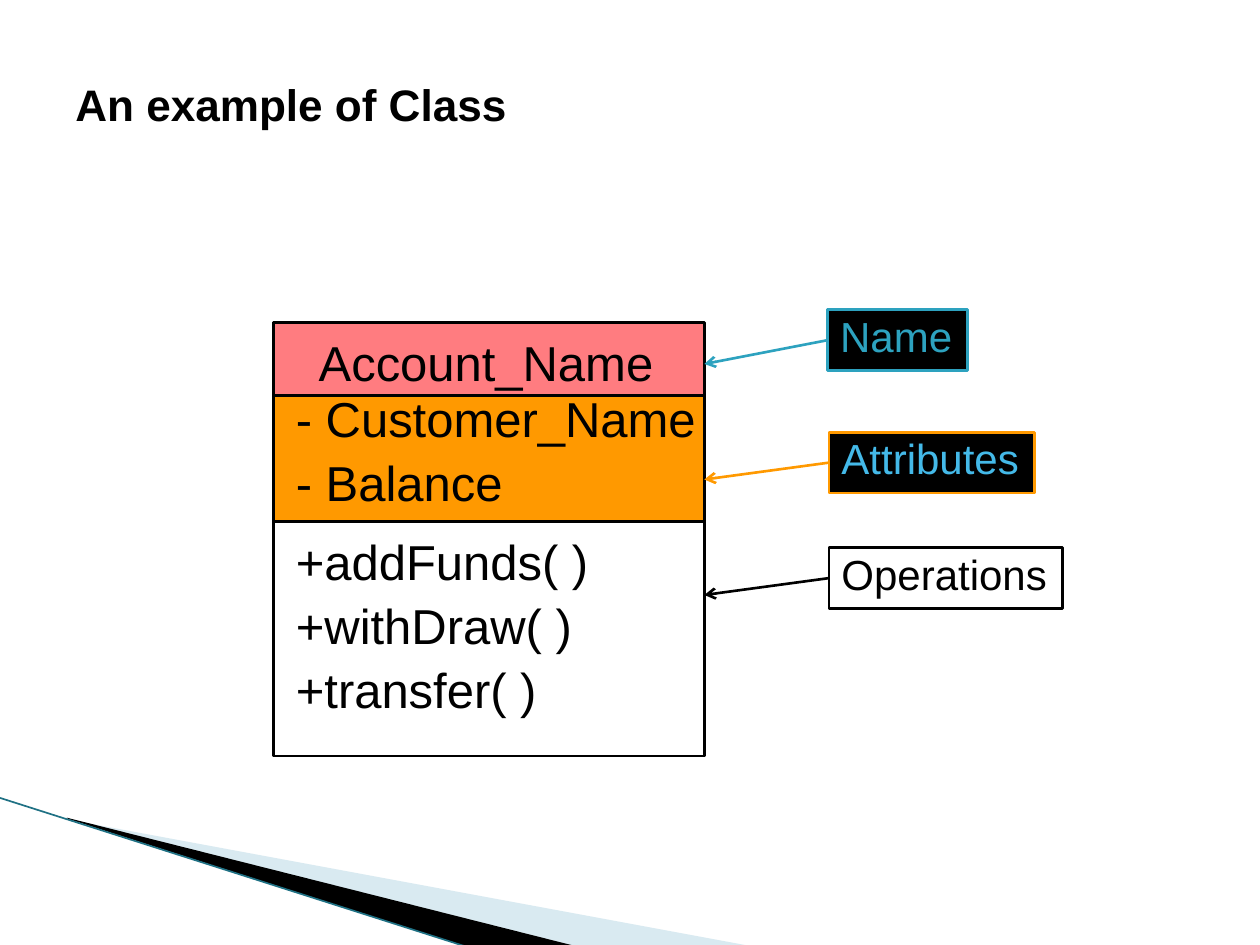
from typing import NamedTuple

from lxml import etree
from pptx import Presentation
from pptx.dml.color import RGBColor
from pptx.enum.shapes import MSO_CONNECTOR, MSO_SHAPE
from pptx.enum.text import MSO_ANCHOR, PP_ALIGN
from pptx.oxml.ns import qn
from pptx.util import Pt

RECTANGLE = MSO_SHAPE.RECTANGLE
STRAIGHT = MSO_CONNECTOR.STRAIGHT
TOP, MIDDLE = MSO_ANCHOR.TOP, MSO_ANCHOR.MIDDLE
LEFT = PP_ALIGN.LEFT
LEFT_SIDE = 1
COLORS = {
    "black": "000000", "coral": "FF7C80", "orange": "FF9900",
    "teal": "2DA2BF", "sky": "44B9E8", "pale": "A0CBDC", "edge": "1F7184",
}
CLASS_LEFT, CLASS_WIDTH = 156.25, 246.25
LABEL_HEIGHT = 34.75


class Compartment(NamedTuple):
    top: float
    height: float
    fill: str | None


class Lines(NamedTuple):
    left: float
    top: float
    width: float
    height: float
    texts: tuple[str, ...]


class Label(NamedTuple):
    text: str
    left: float
    top: float
    width: float
    fill: str | None
    line: str
    color: str
    target: float


class Wedge(NamedTuple):
    points: tuple[tuple[float, float], ...]
    fill: str
    opacity: int


WEDGES = (
    Wedge(((39.6, 468.5), (428.4, 540.5), (328.3, 540.5), (39.6, 468)), "pale", 40),
    Wedge(((38.2, 467.3), (329, 540.7), (267.8, 541.4), (38.9, 468)), "black", 100),
)
COMPARTMENTS = (
    Compartment(298, 134, None),
    Compartment(226, 72, "orange"),
    Compartment(184.25, 41.75, "coral"),
)
CLASS_LINES = (
    Lines(175, 190, 206, 37.5, ("Account_Name",)),
    Lines(162, 222, 244, 74, ("- Customer_Name", "- Balance")),
    Lines(162, 303.75, 191.5, 112, ("+addFunds( )", "+withDraw( )", "+transfer( )")),
)
LABELS = (
    Label("Name", 473, 177, 80, "black", "teal", "teal", 208),
    Label("Attributes", 473.75, 247, 117.5, "black", "orange", "sky", 274),
    Label("Operations", 473.75, 313, 133.5, None, "black", "black", 340),
)


def rgb(name: str) -> RGBColor:
    """Return a named colour."""
    return RGBColor.from_string(COLORS[name])


def apply(target, values: dict) -> None:
    """Set every attribute in values on the target."""
    for name, value in values.items():
        setattr(target, name, value)


def paint(shape, fill: str | None, line: str | None) -> None:
    """Give a shape its fill and outline without a shadow."""
    shape.shadow.inherit = False
    if fill:
        shape.fill.solid()
        shape.fill.fore_color.rgb = rgb(fill)
    else:
        shape.fill.background()
    if line:
        shape.line.color.rgb = rgb(line)
        shape.line.width = Pt(1.5)
    else:
        shape.line.fill.background()


def write(shape, texts: tuple[str, ...], size: float, color: str,
          bold: bool = False, anchor=TOP) -> None:
    """Fill a shape with left-aligned paragraphs."""
    frame = shape.text_frame
    apply(frame, {"word_wrap": True, "vertical_anchor": anchor, "margin_right": 0})
    frame.text = "\n".join(texts)
    for index, paragraph in enumerate(frame.paragraphs):
        apply(paragraph, {"alignment": LEFT, "line_spacing": 0.9,
                          "space_before": Pt(6.5 if index else 0)})
        apply(paragraph.font, {"name": "Arial", "size": Pt(size), "bold": bold})
        paragraph.font.color.rgb = rgb(color)


def add_box(slide, left: float, top: float, width: float, height: float,
            fill: str | None, line: str):
    """Add an outlined rectangle."""
    shape = slide.shapes.add_shape(RECTANGLE, Pt(left), Pt(top), Pt(width), Pt(height))
    paint(shape, fill, line)
    return shape


def add_line(slide, start: tuple[float, float], end: tuple[float, float],
             color: str, width: float):
    """Add a straight line without a shadow."""
    line = slide.shapes.add_connector(STRAIGHT, *map(Pt, start + end))
    line.line.color.rgb = rgb(color)
    line.line.width = Pt(width)
    etree.SubElement(line._element.spPr, qn("a:effectLst"))
    return line


def add_wedge(slide, wedge: Wedge) -> None:
    """Add a filled corner wedge."""
    first, *rest = [(Pt(x), Pt(y)) for x, y in wedge.points]
    builder = slide.shapes.build_freeform(*first)
    builder.add_line_segments(rest)
    shape = builder.convert_to_shape()
    paint(shape, wedge.fill, None)
    if wedge.opacity < 100:
        color = shape._element.spPr.find(qn("a:solidFill"))[0]
        etree.SubElement(color, qn("a:alpha"), val=str(wedge.opacity * 1000))


def add_label(slide, label: Label) -> None:
    """Add a label with an arrow to the class box."""
    box = add_box(slide, label.left, label.top, label.width, LABEL_HEIGHT,
                  label.fill, label.line)
    write(box, (label.text,), 24, label.color)
    arrow = add_line(slide, (label.left, label.top + LABEL_HEIGHT / 2),
                     (CLASS_LEFT + CLASS_WIDTH, label.target), label.line, 1.5)
    arrow.begin_connect(box, LEFT_SIDE)
    etree.SubElement(arrow.line._get_or_add_ln(), qn("a:tailEnd"), type="arrow")


def add_text(slide, lines: Lines, size: float, bold: bool = False, anchor=TOP) -> None:
    """Add a text box with black lines."""
    box = slide.shapes.add_textbox(*map(Pt, lines[:4]))
    write(box, lines.texts, size, "black", bold, anchor)


def main() -> None:
    """Build the class diagram slide."""
    presentation = Presentation()
    apply(presentation, {"slide_width": Pt(720), "slide_height": Pt(540)})
    slide = presentation.slides.add_slide(presentation.slide_layouts[6])
    for wedge in WEDGES:
        add_wedge(slide, wedge)
    add_line(slide, (-0.7, 455.75), (267.8, 541.4), "edge", 0.95)
    title = Lines(36, 16, 648, 90, ("An example of Class",))
    add_text(slide, title, 25.2, True, MIDDLE)
    for part in COMPARTMENTS:
        add_box(slide, CLASS_LEFT, part.top, CLASS_WIDTH, part.height, part.fill, "black")
    for lines in CLASS_LINES:
        add_text(slide, lines, 28)
    for label in LABELS:
        add_label(slide, label)
    presentation.save("out.pptx")


if __name__ == "__main__":
    main()
